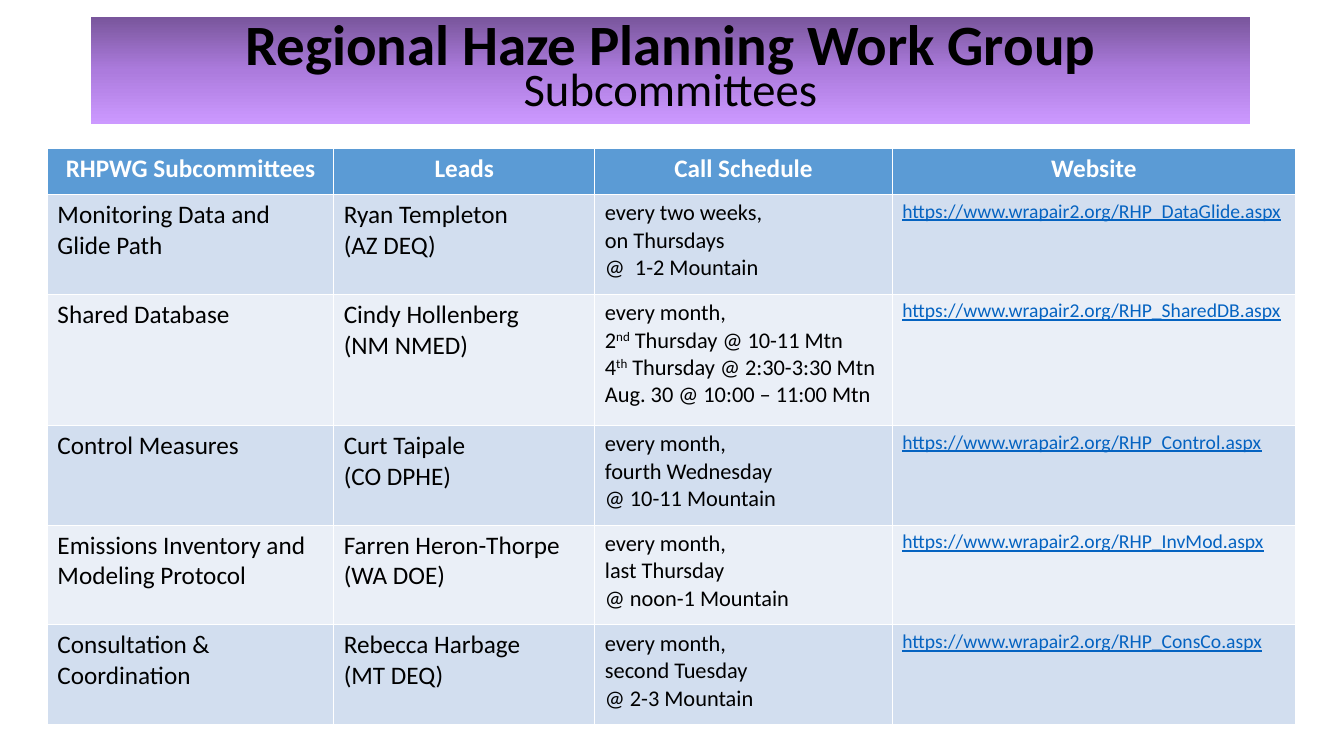
from copy import deepcopy

from pptx import Presentation
from pptx.dml.color import RGBColor
from pptx.enum.shapes import MSO_SHAPE as Shape
from pptx.enum.text import MSO_ANCHOR as Anchor, PP_ALIGN as Align
from pptx.oxml.ns import qn
from pptx.util import Inches, Pt

BLACK = RGBColor(0x00, 0x00, 0x00)
WHITE = RGBColor(0xFF, 0xFF, 0xFF)
HEADER_BLUE = RGBColor(0x5B, 0x9B, 0xD5)
BAND_DARK = RGBColor(0xD2, 0xDE, 0xEF)
BAND_LIGHT = RGBColor(0xEA, 0xEF, 0xF7)
LINK_BLUE = RGBColor(0x05, 0x63, 0xC1)
PURPLES = [
    (0, RGBColor(0x79, 0x56, 0x9C)),
    (0.5, RGBColor(0xAC, 0x7B, 0xDD)),
    (1, RGBColor(0xCC, 0x99, 0xFF)),
]

HEADINGS = ["RHPWG Subcommittees", "Leads", "Call Schedule", "Website"]
SUBCOMMITTEES = [
    ("Monitoring Data and Glide Path", ["Ryan Templeton", "(AZ DEQ)"],
     ["every two weeks,", "on Thursdays", "@  1-2 Mountain"], "DataGlide"),
    ("Shared Database", ["Cindy Hollenberg", "(NM NMED)"],
     ["every month,", "2^nd^ Thursday @ 10-11 Mtn", "4^th^ Thursday @ 2:30-3:30 Mtn",
      "Aug. 30 @ 10:00 – 11:00 Mtn"], "SharedDB"),
    ("Control Measures", ["Curt Taipale", "(CO DPHE)"],
     ["every month,", "fourth Wednesday", "@ 10-11 Mountain"], "Control"),
    ("Emissions Inventory and Modeling Protocol", ["Farren Heron-Thorpe", "(WA DOE)"],
     ["every month,", "last Thursday", "@ noon-1 Mountain"], "InvMod"),
    ("Consultation & Coordination", ["Rebecca Harbage", "(MT DEQ)"],
     ["every month,", "second Tuesday", "@ 2-3 Mountain"], "ConsCo"),
]
COLUMN_WIDTHS = [2.84, 2.59, 2.95, 4]
ROW_HEIGHTS = [0.46, 0.99, 1.3, 0.99, 0.99, 0.99]


def add_run(paragraph, text, size, color=BLACK, bold=False, underline=False):
    run = paragraph.add_run()
    run.text = text
    run.font.name = "Calibri"
    run.font.size = Pt(size)
    run.font.bold = bold
    run.font.underline = underline
    run.font.color.rgb = color
    return run


def fill_cell(cell, lines, size, background, align=Align.LEFT, **style):
    cell.fill.solid()
    cell.fill.fore_color.rgb = background
    for number, line in enumerate(lines):
        frame = cell.text_frame
        paragraph = frame.add_paragraph() if number else frame.paragraphs[0]
        paragraph.alignment = align
        for part, text in enumerate(line.split("^")):
            run = add_run(paragraph, text, size, **style)
            if part % 2:
                run.font._element.set("baseline", "30000")


prs = Presentation()
prs.slide_width = Inches(13.33)
prs.slide_height = Inches(7.5)
slide = prs.slides.add_slide(prs.slide_layouts[6])

schedule = slide.shapes.add_table(
    len(ROW_HEIGHTS), len(COLUMN_WIDTHS),
    Inches(0.47), Inches(1.47), Inches(12.38), Inches(5.73)).table
for column, width in zip(schedule.columns, COLUMN_WIDTHS):
    column.width = Inches(width)
for row, height in zip(schedule.rows, ROW_HEIGHTS):
    row.height = Inches(height)

for column, heading in enumerate(HEADINGS):
    fill_cell(schedule.cell(0, column), [heading], 18, HEADER_BLUE,
              Align.CENTER, color=WHITE, bold=True)

for row, (subcommittee, leads, calls, page) in enumerate(SUBCOMMITTEES, start=1):
    band = BAND_DARK if row % 2 else BAND_LIGHT
    website = f"https://www.wrapair2.org/RHP_{page}.aspx"
    fill_cell(schedule.cell(row, 0), [subcommittee], 18, band)
    fill_cell(schedule.cell(row, 1), leads, 18, band)
    fill_cell(schedule.cell(row, 2), calls, 16, band)
    fill_cell(schedule.cell(row, 3), [website], 14, band, color=LINK_BLUE, underline=True)

banner = slide.shapes.add_shape(
    Shape.RECTANGLE, Inches(0.9), Inches(0.17), Inches(11.5), Inches(1.06))
banner.shadow.inherit = False
banner.line.fill.background()
banner.fill.gradient()
banner.fill.gradient_angle = 270
stop_list = banner._element.spPr.find(qn("a:gradFill")).find(qn("a:gsLst"))
stop_list.append(deepcopy(stop_list[0]))
for stop, (position, purple) in zip(banner.fill.gradient_stops, PURPLES):
    stop.position = position
    stop.color.rgb = purple

title = banner.text_frame
title.word_wrap = True
title.vertical_anchor = Anchor.MIDDLE
group_name = title.paragraphs[0]
subtitle = title.add_paragraph()
for paragraph in (group_name, subtitle):
    paragraph.alignment = Align.CENTER
    paragraph.line_spacing = 0.7
add_run(group_name, "Regional Haze Planning Work Group", 40.7, bold=True)
add_run(subtitle, "Subcommittees", 33.3)

prs.save("out.pptx")
